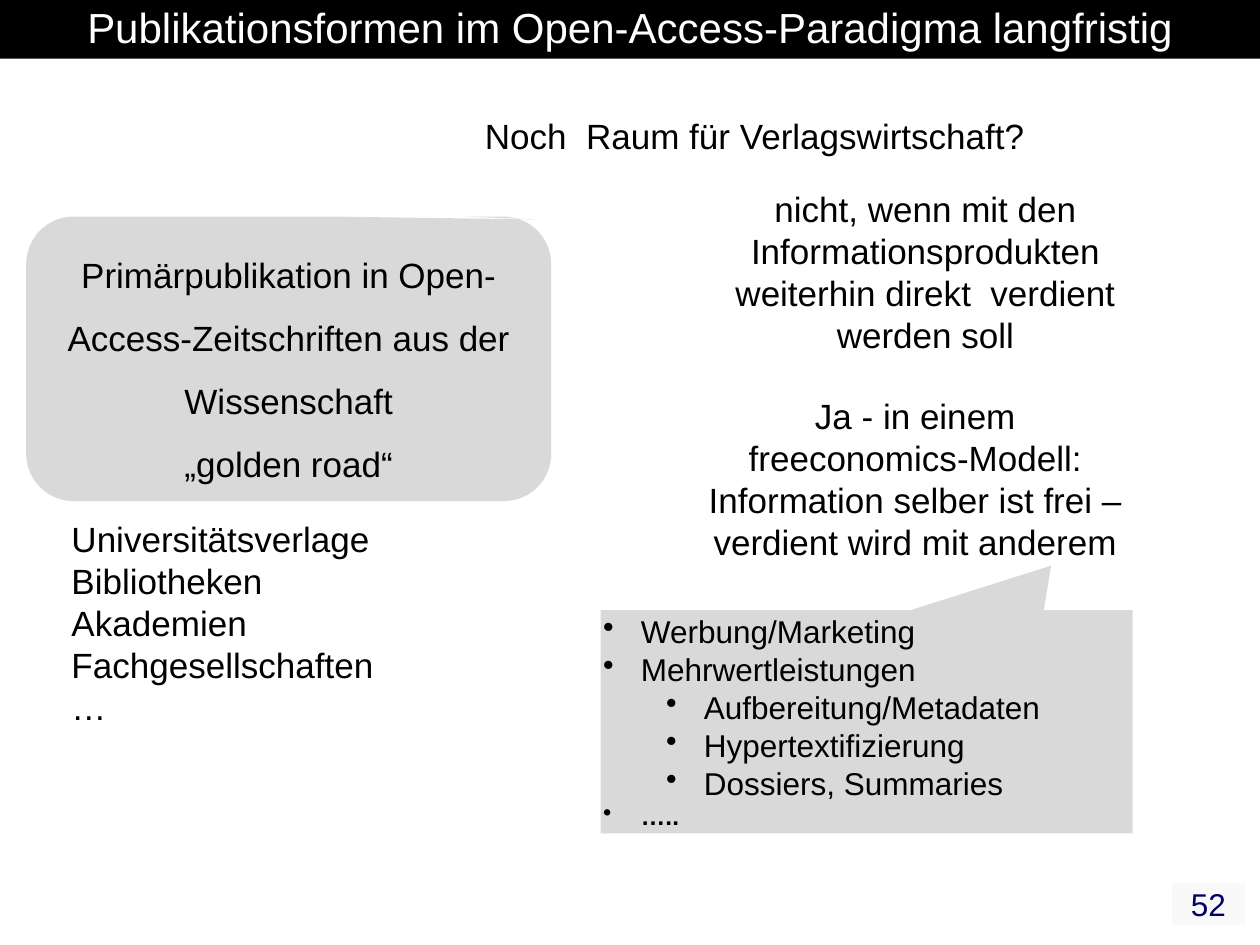
from dataclasses import dataclass

import pptx
import pptx.dml.color
import pptx.enum.shapes
import pptx.enum.text
import pptx.oxml
import pptx.util
from pptx.enum.shapes import MSO_SHAPE
from pptx.enum.text import MSO_ANCHOR, PP_ALIGN
from pptx.util import Pt

COLOURS = {"black": "000000", "white": "FFFFFF", "grey": "D9D9D9",
           "pale": "F9F9F9", "navy": "000066"}
FONT = "Arial"
CALLOUT_MARGINS = (1.5, 0.75)
TEXT_MARGINS = (7.2, 3.6)


@dataclass
class Line:
    text: str
    size: float = 20
    colour: str = "black"
    bold: bool = False
    align: PP_ALIGN = PP_ALIGN.LEFT
    spacing: float = 1.0
    level: int = 0
    bullet: bool = False


@dataclass
class Area:
    left: float
    top: float
    width: float
    height: float


@dataclass
class Callout:
    preset: MSO_SHAPE
    area: Area
    adjustments: tuple[float, ...]
    lines: list[Line]


def rgb(name: str) -> pptx.dml.color.RGBColor:
    return pptx.dml.color.RGBColor.from_string(COLOURS[name])


def fill_shape(shape, colour: str) -> None:
    shape.fill.solid()
    shape.fill.fore_color.rgb = rgb(colour)


def place(shape, area: Area) -> None:
    shape.left, shape.top = Pt(area.left), Pt(area.top)
    shape.width, shape.height = Pt(area.width), Pt(area.height)


def add_bullet(para, level: int) -> None:
    """Give the paragraph a hanging bullet, indented by its level."""
    properties = para._p.get_or_add_pPr()
    properties.set("marL", str(Pt(21.6 + 36 * level)))
    properties.set("indent", str(Pt(-21.6)))
    bullet = pptx.oxml.parse_xml(
        '<a:buChar xmlns:a="http://schemas.openxmlformats.org/drawingml/2006/main" char="•"/>')
    properties.insert_element_before(bullet, "a:tabLst", "a:defRPr", "a:extLst")


def write(shape, lines: list[Line], anchor=MSO_ANCHOR.TOP, margins=TEXT_MARGINS,
          wrap: bool = True) -> None:
    frame = shape.text_frame
    frame.auto_size = pptx.enum.text.MSO_AUTO_SIZE.NONE
    frame.word_wrap = wrap
    frame.vertical_anchor = anchor
    frame.margin_left = frame.margin_right = Pt(margins[0])
    frame.margin_top = frame.margin_bottom = Pt(margins[1])
    for index, line in enumerate(lines):
        para = frame.add_paragraph() if index else frame.paragraphs[0]
        para.text = line.text
        para.alignment = line.align
        para.line_spacing = line.spacing
        para.level = line.level
        para.font.name = FONT
        para.font.size = Pt(line.size)
        para.font.bold = line.bold
        para.font.color.rgb = rgb(line.colour)
        if line.bullet:
            add_bullet(para, line.level)


def add_text(page, area: Area, lines: list[Line]):
    box = page.shapes.add_textbox(0, 0, 0, 0)
    place(box, area)
    write(box, lines)


def add_callout(page, callout: Callout) -> None:
    shape = page.shapes.add_shape(callout.preset, 0, 0, 0, 0)
    place(shape, callout.area)
    shape.shadow.inherit = False
    shape.line.fill.background()
    fill_shape(shape, "grey")
    for index, value in enumerate(callout.adjustments):
        shape.adjustments[index] = value
    write(shape, callout.lines, MSO_ANCHOR.MIDDLE, CALLOUT_MARGINS)


def centred(*texts: str, spacing: float = 1.0) -> list[Line]:
    return [Line(text, align=PP_ALIGN.CENTER, spacing=spacing) for text in texts]


def bulleted(*texts: str, level: int = 0) -> list[Line]:
    return [Line(text, size=18, level=level, bullet=True) for text in texts]


TEXTS = [
    (Area(270, 62, 354, 32), [Line("Noch  Raum für Verlagswirtschaft?")]),
    (Area(33.8, 292.3, 208, 128),
     [Line(text) for text in ("Universitätsverlage", "Bibliotheken", "Akademien",
                              "Fachgesellschaften", "…")]),
    (Area(399.6, 103.6, 258.5, 104.4),
     centred("nicht, wenn mit den Informationsprodukten weiterhin direkt  verdient werden soll")),
    (Area(393.8, 221.8, 258.5, 104.4),
     centred("Ja - in einem freeconomics-Modell:",
             "Information selber ist frei – verdient wird mit anderem")),
]

GOLDEN_ROAD = Callout(
    MSO_SHAPE.ROUNDED_RECTANGULAR_CALLOUT, Area(15, 123.8, 300, 162.6), (0.473, -0.49, 0.167),
    centred("Primärpublikation in Open-Access-Zeitschriften aus der Wissenschaft",
            "„golden road“", spacing=1.5))

INCOME_SOURCES = Callout(
    MSO_SHAPE.RECTANGULAR_CALLOUT, Area(343.2, 348.6, 304, 127.6), (0.347, -0.699),
    bulleted("Werbung/Marketing", "Mehrwertleistungen")
    + bulleted("Aufbereitung/Metadaten", "Hypertextifizierung", "Dossiers, Summaries", level=1)
    + [Line("…..", size=14, bold=True, bullet=True)])


def main() -> None:
    deck = pptx.Presentation()
    deck.slide_width, deck.slide_height = Pt(720), Pt(540)
    page = deck.slides.add_slide(deck.slide_layouts[5])

    title = page.shapes.title
    place(title, Area(0, 0, 720, 33.6))
    fill_shape(title, "black")
    write(title, [Line("Publikationsformen im Open-Access-Paradigma langfristig", 24, "white",
                       align=PP_ALIGN.CENTER, spacing=0.9)], MSO_ANCHOR.MIDDLE)

    number = page.shapes.add_textbox(0, 0, 0, 0)
    place(number, Area(669.6, 504.7, 41.8, 23.8))
    fill_shape(number, "pale")
    write(number, [Line("52", 18, "navy", align=PP_ALIGN.CENTER)], MSO_ANCHOR.MIDDLE, wrap=False)

    add_callout(page, GOLDEN_ROAD)
    for area, lines in TEXTS:
        add_text(page, area, lines)
    add_callout(page, INCOME_SOURCES)
    deck.save("out.pptx")


if __name__ == "__main__":
    main()
